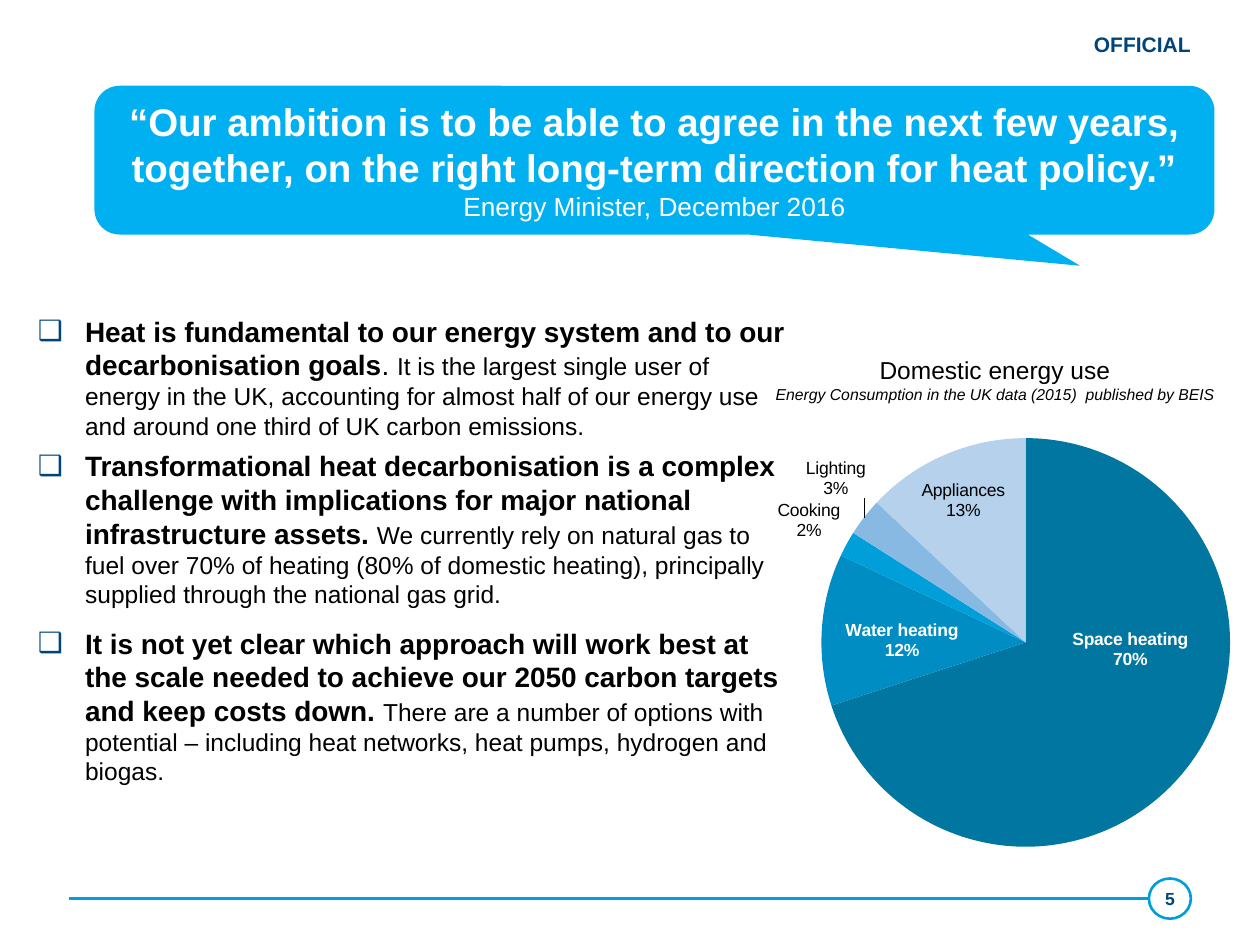
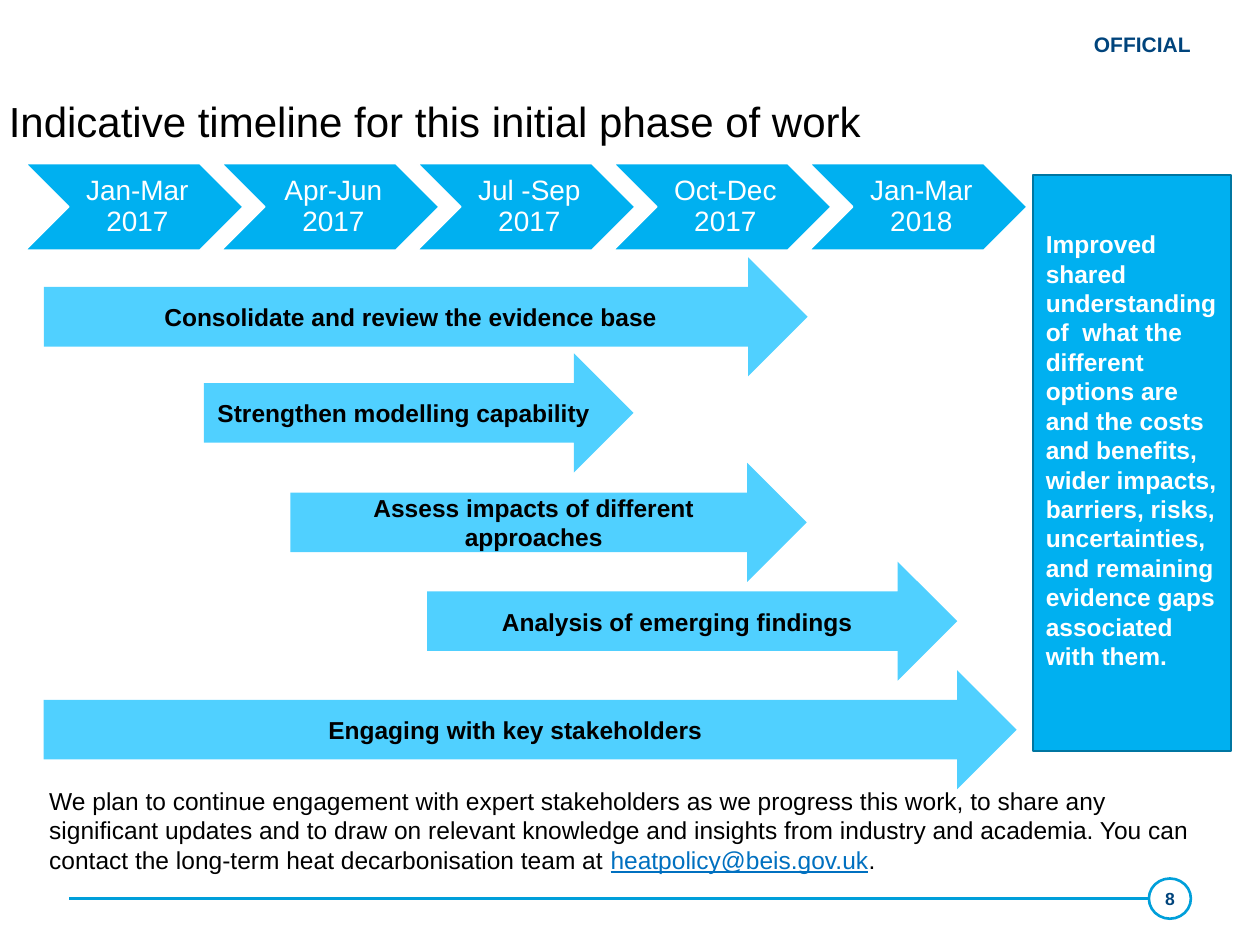
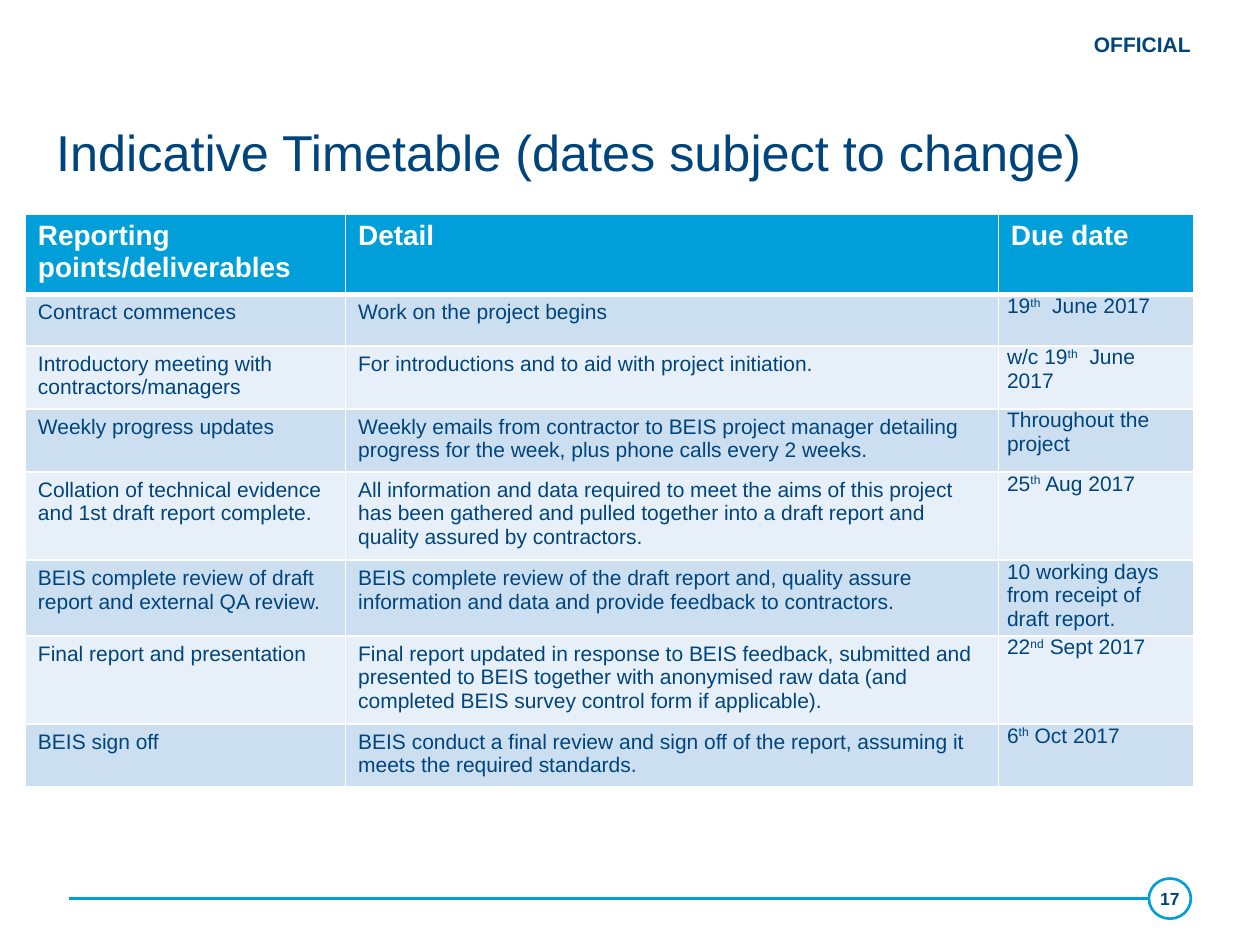
from lxml.etree import SubElement
from pptx import Presentation
from pptx.chart.data import CategoryChartData
from pptx.dml.color import RGBColor
from pptx.enum.chart import XL_CHART_TYPE as CHART, XL_LABEL_POSITION as LABEL
from pptx.enum.shapes import MSO_CONNECTOR as LINE, MSO_SHAPE as SHAPE
from pptx.enum.text import MSO_ANCHOR as ANCHOR, PP_ALIGN as ALIGN
from pptx.oxml import parse_xml
from pptx.oxml.ns import nsdecls, qn
from pptx.util import Pt

FONT = "Arial"
INSETS = (7.2, 3.6, 7.2, 3.6)
COLORS = {
    "navy": "00447C", "blue": "009FDA", "sky": "00B0F0", "pale_sky": "50D0FF",
    "teal": "0076A1", "link": "0070C0", "white": "FFFFFF", "black": "000000",
    "band_dark": "CCDFF1", "band_light": "E7F0F8",
    "water": "008DC3", "lighting": "87B9E3", "appliances": "B5D1EC",
}


def rgb(name):
    return RGBColor.from_string(COLORS[name])


class Deck:
    def __init__(self):
        self.prs = Presentation()
        self.prs.slide_width, self.prs.slide_height = Pt(720), Pt(540)
        self.s = None

    def slide(self, number):
        self.s = self.prs.slides.add_slide(self.prs.slide_layouts[6])
        self.line((656.5, 513.5), (39.5, 513.5), "blue", 1.5)
        self.shape(SHAPE.OVAL, (656.5, 502, 24, 23), None, [number], line=("blue", 1.5),
                   insets=(0, 0, 0, 0), wrap=False, size=10, bold=True, color="navy")
        self.text((618, 14.5, 70, 21.5), ["OFFICIAL"], wrap=False,
                  size=12, bold=True, color="navy")

    def style(self, r, size=14, color="black", bold=False, italic=False,
              underline=False, raised=False):
        f = r.font
        f.name, f.size, f.color.rgb = FONT, Pt(size), rgb(color)
        f.bold, f.italic, f.underline = bold, italic, underline
        if raised:
            r._r.get_or_add_rPr().set("baseline", "30000")

    def fill_text(self, tf, paragraphs, align=ALIGN.LEFT, spacing=None, **base):
        for i, content in enumerate(paragraphs):
            p = tf.add_paragraph() if i else tf.paragraphs[0]
            p.alignment = align
            if spacing:
                p.line_spacing = spacing
            pieces = [(content, {})] if isinstance(content, str) else content
            for text, changes in pieces:
                r = p.add_run()
                r.text = text
                self.style(r, **{**base, **changes})

    def frame(self, tf, insets=INSETS, anchor=ANCHOR.TOP, wrap=True):
        tf.word_wrap, tf.vertical_anchor = wrap, anchor
        sides = [Pt(v) for v in insets]
        tf.margin_left, tf.margin_top, tf.margin_right, tf.margin_bottom = sides

    def text(self, box, paragraphs, anchor=ANCHOR.TOP, wrap=True, **style):
        tf = self.s.shapes.add_textbox(*map(Pt, box)).text_frame
        self.frame(tf, anchor=anchor, wrap=wrap)
        self.fill_text(tf, paragraphs, **style)
        return tf

    def title(self, box, text, **style):
        self.text(box, [text], anchor=ANCHOR.MIDDLE, **style)

    def bullets(self, box, items, gaps):
        tf = self.text(box, items)
        for p, gap in zip(tf.paragraphs, gaps):
            p.space_before = Pt(gap)
            pPr = p._p.get_or_add_pPr()
            pPr.set("marL", str(Pt(27)))
            pPr.set("indent", str(Pt(-27)))
            clr = SubElement(pPr, qn("a:buClr"))
            SubElement(clr, qn("a:srgbClr"), val=COLORS["navy"])
            SubElement(pPr, qn("a:buFont"), typeface=FONT)
            SubElement(pPr, qn("a:buChar"), char="❑")

    def shape(self, kind, box, fill, paragraphs, line=None, adjust=(), insets=INSETS,
              anchor=ANCHOR.MIDDLE, wrap=True, align=ALIGN.CENTER, **style):
        sp = self.s.shapes.add_shape(kind, *map(Pt, box))
        sp.shadow.inherit = False
        for i, value in enumerate(adjust):
            sp.adjustments[i] = value
        if fill:
            sp.fill.solid()
            sp.fill.fore_color.rgb = rgb(fill)
        else:
            sp.fill.background()
        if line:
            sp.line.color.rgb, sp.line.width = rgb(line[0]), Pt(line[1])
        else:
            sp.line.fill.background()
        self.frame(sp.text_frame, insets, anchor, wrap)
        self.fill_text(sp.text_frame, paragraphs, align=align, **style)

    def line(self, start, end, color, width):
        c = self.s.shapes.add_connector(LINE.STRAIGHT, *map(Pt, start + end))
        c.line.color.rgb, c.line.width = rgb(color), Pt(width)
        SubElement(c._element.spPr, qn("a:effectLst"))

    def layout(self, **values):
        tags = "".join(f'<c:{k} val="{v}"/>' for k, v in values.items())
        return parse_xml(f'<c:layout {nsdecls("c")}><c:manualLayout>{tags}'
                         '</c:manualLayout></c:layout>')

    def pie(self, box, slices):
        data = CategoryChartData()
        data.categories = [row[0] for row in slices]
        data.add_series("Series 1", [row[1] for row in slices])
        chart = self.s.shapes.add_chart(CHART.PIE, *map(Pt, box), data).chart
        chart.has_title = chart.has_legend = False
        chart.font.name, chart.font.size = FONT, Pt(10)
        chart.font.color.rgb = rgb("black")
        plot = chart.plots[0]
        plot.vary_by_categories = True
        for i, (_, value, label, fill, color, place, _) in enumerate(slices):
            point = plot.series[0].points[i]
            point.format.fill.solid()
            point.format.fill.fore_color.rgb = rgb(fill)
            point.format.line.fill.background()
            tf = point.data_label.text_frame
            tf.text = f"{label}\n{value}%"
            for p in tf.paragraphs:
                for r in p.runs:
                    self.style(r, size=10, color=color, bold=color == "white")
            point.data_label.position = place
        area = chart._chartSpace.find(".//" + qn("c:plotArea"))
        for old in area.findall(qn("c:layout")):
            area.remove(old)
        area.insert(0, self.layout(layoutTarget="inner", xMode="edge", yMode="edge",
                                   x=0.23, y=0.11, w=0.56, h=0.85))
        for label, row in zip(area.iter(qn("c:dLbl")), slices):
            x, y = row[6]
            label.insert(1, self.layout(x=x, y=y))

    def border(self, cell, widths):
        tcPr = cell._tc.get_or_add_tcPr()
        for i, (side, width) in enumerate(widths.items()):
            tcPr.insert(i, parse_xml(
                f'<a:ln{side} {nsdecls("a")} w="{Pt(width)}"><a:solidFill>'
                f'<a:srgbClr val="{COLORS["white"]}"/></a:solidFill></a:ln{side}>'))

    def table(self, left, top, widths, heights, rows):
        box = (left, top, sum(widths), sum(heights))
        t = self.s.shapes.add_table(len(rows), len(widths), *map(Pt, box)).table
        for col, width in zip(t.columns, widths):
            col.width = Pt(width)
        for i, (row, height) in enumerate(zip(rows, heights)):
            t.rows[i].height = Pt(height)
            for j, content in enumerate(row):
                cell = t.cell(i, j)
                cell.fill.solid()
                fill = "blue" if i == 0 else "band_dark" if i % 2 else "band_light"
                cell.fill.fore_color.rgb = rgb(fill)
                self.border(cell, {"L": 1, "R": 1, "T": 3 if i == 1 else 1,
                                   "B": 1 if i else 3})
                if i and j == 2:
                    cell.margin_left = cell.margin_right = Pt(5)
                    cell.margin_top = cell.margin_bottom = 0
                pieces = [(text, {"raised": k % 2 == 1})
                          for k, text in enumerate(content.split("^"))]
                look = {"size": 12, "color": "navy"} if i else {
                    "size": 16, "color": "white", "bold": True}
                self.fill_text(cell.text_frame, [pieces], **look)


def heat_slide(d):
    d.slide("5")
    lead = {"size": 16, "bold": True}
    d.bullets((14.5, 176, 442, 325), [
        [("Heat is fundamental to our energy system and to our decarbonisation goals", lead),
         (". ", {"size": 16}),
         ("It is the largest single user of energy in the UK, accounting for almost half of "
          "our energy use and around one third of UK carbon emissions.", {})],
        [("Transformational heat decarbonisation is a complex challenge with implications "
          "for major national infrastructure assets. ", lead),
         ("We currently rely on natural gas to fuel over 70% of heating (80% of domestic "
          "heating), principally supplied through the national gas grid.", {})],
        [("It is not yet clear which approach will work best at the scale needed to achieve "
          "our 2050 carbon targets and keep costs down. ", lead),
         ("There are a number of options with potential – including heat networks, heat "
          "pumps, hydrogen and biogas.", {})],
    ], gaps=(0, 5, 10))
    d.pie((373.5, 219.5, 417, 276), [
        ("Space heating", 70, "Space heating", "teal", "white", LABEL.CENTER, (0.03, -0.11)),
        ("Water heating", 12, "Water heating", "water", "white", LABEL.CENTER, (-0.03, 0.01)),
        ("Cooking/catering", 2, "Cooking", "blue", "black", LABEL.OUTSIDE_END, (0, 0)),
        ("Lighting", 3, "Lighting", "lighting", "black", LABEL.OUTSIDE_END, (0.01, -0.03)),
        ("Appliances", 13, "Appliances", "appliances", "black", LABEL.CENTER, (-0.03, -0.1)),
    ])
    d.text((422.5, 199.5, 292, 35), [
        "Domestic energy use",
        [("Energy Consumption in the UK data (2015)  published by BEIS",
          {"size": 9, "italic": True})],
    ], align=ALIGN.CENTER)
    d.shape(SHAPE.ROUNDED_RECTANGULAR_CALLOUT, (54, 49, 640, 85), "sky", [
        [("“Our ambition is to be able to agree in the next few years, together, on the "
          "right long-term direction for heat policy.”", {"size": 22, "bold": True})],
        "Energy Minister, December 2016",
    ], adjust=(0.38, 0.71, 0.17), size=15, color="white")


def timeline_slide(d):
    d.slide("8")
    d.title((-2, 37.5, 720, 62.5), "Indicative timeline for this initial phase of work", size=24)
    quarters = ["Jan-Mar 2017", "Apr-Jun 2017", "Jul -Sep 2017", "Oct-Dec 2017", "Jan-Mar 2018"]
    for i, quarter in enumerate(quarters):
        d.shape(SHAPE.CHEVRON, (14.5 + 112 * i, 93.5, 124.5, 49.5), "sky", [quarter],
                line=("white", 1), insets=(5, 1.5, 1.5, 1.5), spacing=0.9,
                size=16, color="white")
    for left, top, width, activity in [
        (25, 147, 436.5, "Consolidate and review the evidence base"),
        (116.5, 202, 245.5, "Strengthen modelling capability"),
        (166, 264.5, 295, "Assess impacts of different approaches"),
        (244, 321, 303, "Analysis of emerging findings"),
        (25, 383, 556, "Engaging with key stakeholders"),
    ]:
        d.shape(SHAPE.RIGHT_ARROW, (left, top, width, 68), "pale_sky", [activity], bold=True)
    d.shape(SHAPE.RECTANGLE, (590.5, 100, 113, 329), "sky", [
        "Improved shared understanding of  what the different options are and the costs and "
        "benefits, wider impacts, barriers, risks, uncertainties, and remaining evidence gaps "
        "associated with them.",
    ], line=("teal", 1), insets=(7.2, 31, 7.2, 3.6), anchor=ANCHOR.TOP, align=ALIGN.LEFT,
        color="white", bold=True)
    d.text((21, 445.5, 680.5, 58.5), [[
        ("We plan to continue engagement with expert stakeholders as we progress this work, to "
         "share any significant updates and to draw on relevant knowledge and insights from "
         "industry and academia. You can contact the long-term heat decarbonisation team at ", {}),
        ("heatpolicy@beis.gov.uk", {"color": "link", "underline": True}),
        (".", {}),
    ]])


def timetable_slide(d):
    d.slide("17")
    d.title((25, 60.5, 658, 56), "Indicative Timetable (dates subject to change)",
            size=28.8, color="navy", spacing=0.9)
    d.table(14.5, 122.5, (183, 373, 111.5), (42, 29.5, 34, 34, 47.5, 40, 48, 34), [
        ("Reporting points/deliverables", "Detail", "Due date"),
        ("Contract commences", "Work on the project begins", "19^th^  June 2017"),
        ("Introductory meeting with contractors/managers",
         "For introductions and to aid with project initiation.", "w/c 19^th^  June 2017"),
        ("Weekly progress updates",
         "Weekly emails from contractor to BEIS project manager detailing progress for the "
         "week, plus phone calls every 2 weeks.", "Throughout the project"),
        ("Collation of technical evidence and 1st draft report complete.",
         "All information and data required to meet the aims of this project has been gathered "
         "and pulled together into a draft report and quality assured by contractors.",
         "25^th^ Aug 2017"),
        ("BEIS complete review of draft report and external QA review.",
         "BEIS complete review of the draft report and, quality assure information and data "
         "and provide feedback to contractors.",
         "10 working days from receipt of draft report."),
        ("Final report and presentation",
         "Final report updated in response to BEIS feedback, submitted and presented to BEIS "
         "together with anonymised raw data (and completed BEIS survey control form if "
         "applicable).", "22^nd^ Sept 2017"),
        ("BEIS sign off",
         "BEIS conduct a final review and sign off of the report, assuming it meets the "
         "required standards.", "6^th^ Oct 2017"),
    ])


def main():
    d = Deck()
    heat_slide(d)
    timeline_slide(d)
    timetable_slide(d)
    d.prs.save("out.pptx")


if __name__ == "__main__":
    main()
